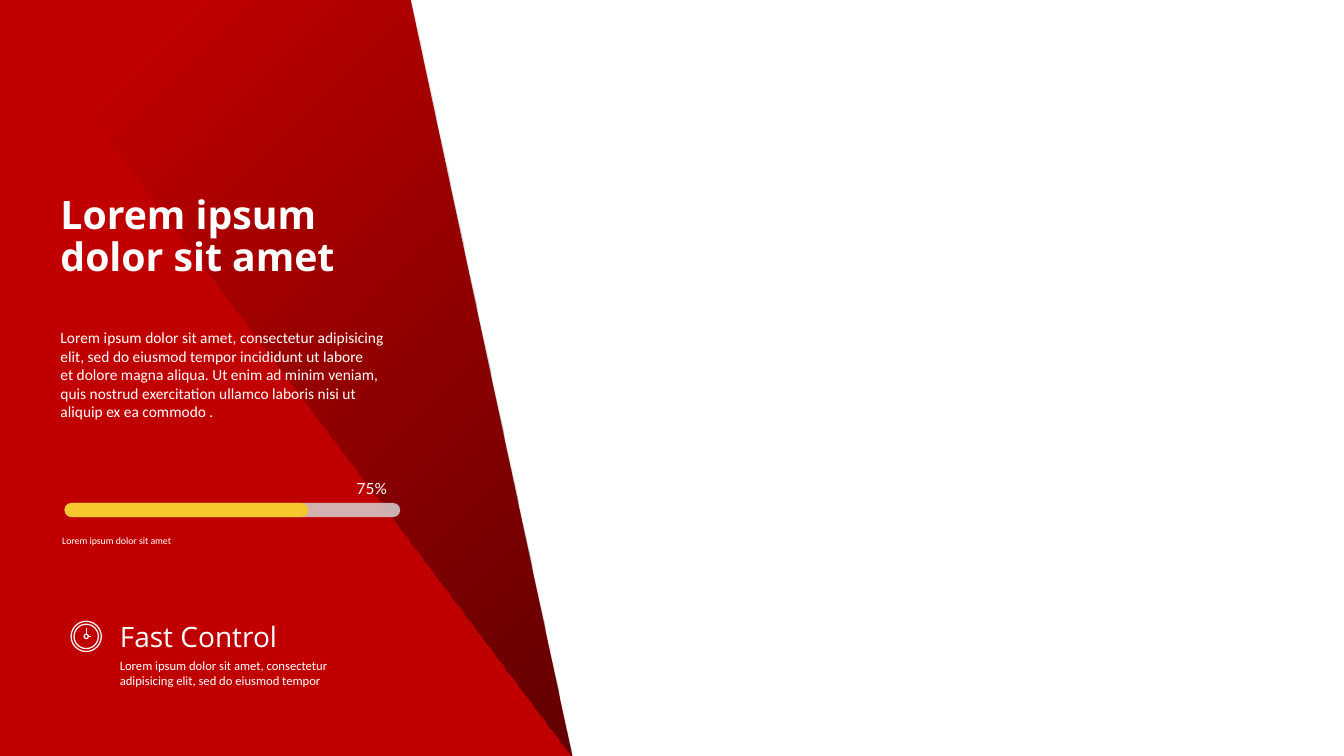
from lxml import etree
from pptx import Presentation
from pptx import util as u
from pptx.dml import color
from pptx.enum import shapes, text
from pptx.oxml import ns

COLORS = {
    "red": "C00000", "black": "000000", "white": "FFFFFF",
    "track": "D9D9D9", "yellow": "F6C72F", "icon": "F2F2F2",
}


def rgb(name):
    return color.RGBColor.from_string(COLORS[name])


def set_alphas(shape, *percents):
    stops = shape._element.spPr.iter(ns.qn("a:srgbClr"))
    for stop, percent in zip(stops, percents):
        etree.SubElement(stop, ns.qn("a:alpha")).set("val", str(percent * 1000))


def place(shape, left, top, width, height):
    shape.left, shape.top = u.Pt(left), u.Pt(top)
    shape.width, shape.height = u.Pt(width), u.Pt(height)


def write(shape, content, size, font="Calibri", bold=False, spacing=None):
    frame = shape.text_frame
    frame.text = content
    frame.word_wrap = True
    frame.auto_size = text.MSO_AUTO_SIZE.NONE
    frame.vertical_anchor = text.MSO_ANCHOR.TOP
    for paragraph in frame.paragraphs:
        paragraph.alignment = text.PP_ALIGN.LEFT
        paragraph.space_before = u.Pt(0)
        paragraph.line_spacing = spacing
        paragraph.font.size = u.Pt(size)
        paragraph.font.name = font
        paragraph.font.bold = bold
        paragraph.font.color.rgb = rgb("white")


def remove_bullets(shape):
    for paragraph in shape.text_frame.paragraphs:
        properties = paragraph._p.get_or_add_pPr()
        properties.set("marL", "0")
        properties.set("indent", "0")
        bullet = etree.Element(ns.qn("a:buNone"))
        properties.insert_element_before(bullet, "a:tabLst", "a:defRPr", "a:extLst")


def add_label(slide, box, content, size, **style):
    label = slide.shapes.add_textbox(*map(u.Pt, box))
    write(label, content, size, **style)


def add_backdrop(slide, layer, points):
    builder = slide.shapes.build_freeform(*points[0], scale=u.Pt(1))
    builder.add_line_segments(points[1:], close=True)
    shape = builder.convert_to_shape()
    shape.shadow.inherit = False
    shape.line.fill.background()
    slide.shapes._spTree.insert(2 + layer, shape._element)
    return shape


def add_bar(slide, width, fill):
    bar = slide.shapes.add_shape(
        shapes.MSO_SHAPE.ROUNDED_RECTANGLE, *map(u.Pt, (46.1, 359.3, width, 10.1)))
    bar.adjustments[0] = 0.5
    bar.shadow.inherit = False
    bar.line.fill.background()
    bar.fill.solid()
    bar.fill.fore_color.rgb = rgb(fill)
    return bar


def add_clock(slide, x, y):
    for radius in (10.8, 8.7, 1.5):
        ring = slide.shapes.add_shape(
            shapes.MSO_SHAPE.OVAL,
            *map(u.Pt, (x - radius, y - radius, 2 * radius, 2 * radius)))
        ring.shadow.inherit = False
        ring.fill.background()
        ring.line.color.rgb = rgb("icon")
        ring.line.width = u.Pt(0.9)
    for dx, dy in ((0, -1), (1, 0)):
        reach = 5.8 if dy else 3.6
        ends = (x + 1.5 * dx, y + 1.5 * dy, x + reach * dx, y + reach * dy)
        hand = slide.shapes.add_connector(
            shapes.MSO_CONNECTOR.STRAIGHT, *map(u.Pt, ends))
        hand.line.color.rgb = rgb("icon")
        hand.line.width = u.Pt(0.9)
        etree.SubElement(hand._element.spPr, ns.qn("a:effectLst"))


def main():
    presentation = Presentation()
    presentation.slide_width, presentation.slide_height = u.Pt(960), u.Pt(540)
    slide = presentation.slides.add_slide(presentation.slide_layouts[1])

    panel = add_backdrop(slide, 0, [(-0.7, -2.2), (293, -2.2), (409, 540.7), (-0.7, 540)])
    panel.fill.solid()
    panel.fill.fore_color.rgb = rgb("red")

    shade = add_backdrop(slide, 1, [(1.4, -0.7), (409, 540.7), (294.5, 0)])
    shade.fill.gradient()
    shade.fill.gradient_angle = 135
    for stop, position in zip(shade.fill.gradient_stops, (0, 0.85)):
        stop.color.rgb = rgb("black")
        stop.position = position
    set_alphas(shade, 49, 0)

    title = slide.shapes.title
    place(title, 36, 137, 261.4, 75)
    write(title, "Lorem ipsum\ndolor sit amet", 28, font="Open Sans", bold=True,
          spacing=0.88)

    body = slide.placeholders[1]
    place(body, 36, 231.1, 280.8, 74.2)
    write(body, "Lorem ipsum dolor sit amet, consectetur adipisicing\n"
                "elit, sed do eiusmod tempor incididunt ut labore\n"
                "et dolore magna aliqua. Ut enim ad minim veniam,\n"
                "quis nostrud exercitation ullamco laboris nisi ut\n"
                "aliquip ex ea commodo .", 11)
    remove_bullets(body)

    track = add_bar(slide, 239.8, "track")
    set_alphas(track, 82)
    add_bar(slide, 174.2, "yellow")
    add_label(slide, (247.7, 338.4, 49.7, 20.9), "75%", 11, font="Lato")
    add_label(slide, (37.4, 378.7, 156.2, 15.8), "Lorem ipsum dolor sit amet", 7)

    add_clock(slide, 61.6, 454.6)
    add_label(slide, (78.5, 439.2, 157, 31.7), "Fast Control", 20, font="Open Sans")
    add_label(slide, (78.5, 466.6, 214.6, 28.8),
              "Lorem ipsum dolor sit amet, consectetur\n"
              "adipisicing elit, sed do eiusmod tempor", 9)

    presentation.save("out.pptx")


if __name__ == "__main__":
    main()
